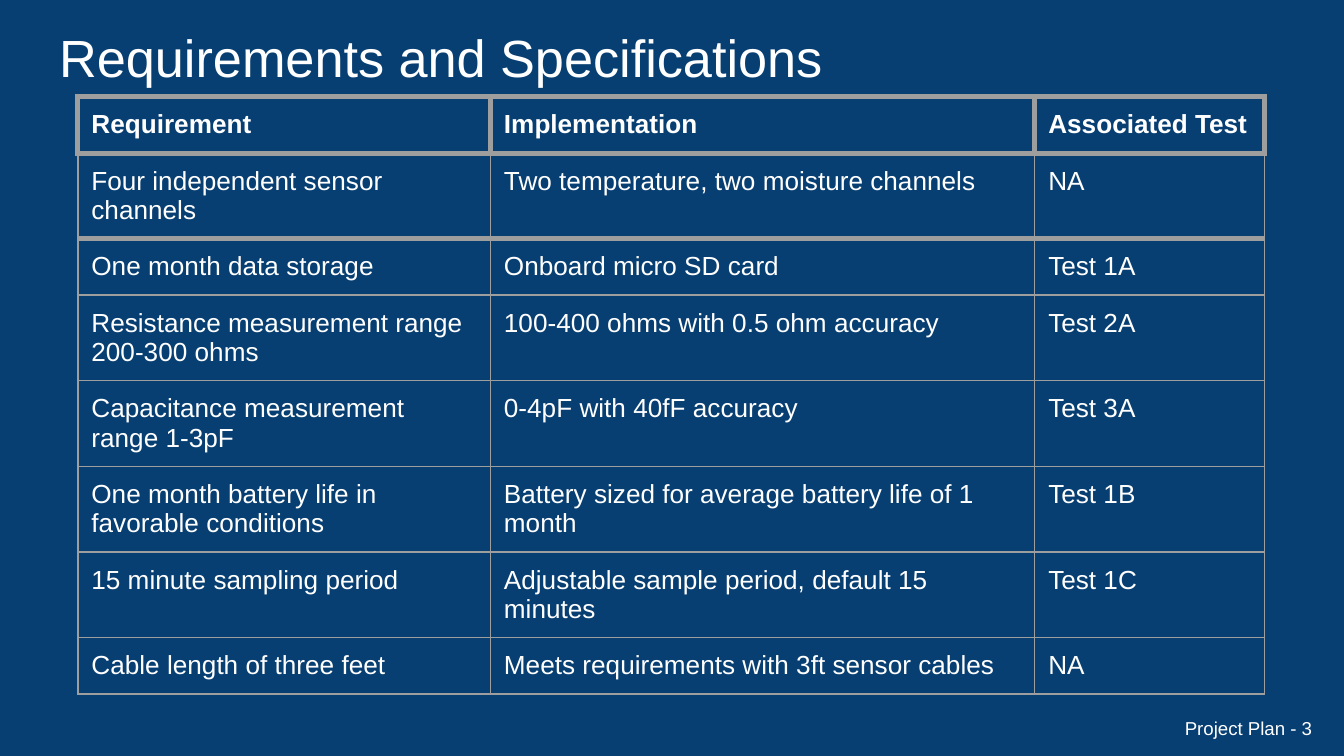
import pptx
import pptx.dml.color
import pptx.enum.text
import pptx.oxml
import pptx.oxml.ns
import pptx.util
from pptx.util import Inches

NAVY = pptx.dml.color.RGBColor(0x08, 0x3F, 0x72)
WHITE = pptx.dml.color.RGBColor(0xFF, 0xFF, 0xFF)
GREY = pptx.dml.color.RGBColor(0x9E, 0x9E, 0x9E)
FONT = "Arial"
THIN, THICK = 0.75, 3

TITLE = "Requirements and Specifications"
FOOTER = "Project Plan - 3"
ROWS = [
    ("Requirement", "Implementation", "Associated Test"),
    ("Four independent sensor channels", "Two temperature, two moisture channels", "NA"),
    ("One month data storage", "Onboard micro SD card", "Test 1A"),
    ("Resistance measurement range 200-300 ohms", "100-400 ohms with 0.5 ohm accuracy", "Test 2A"),
    ("Capacitance measurement range 1-3pF", "0-4pF with 40fF accuracy", "Test 3A"),
    ("One month battery life in favorable conditions",
     "Battery sized for average battery life of 1 month", "Test 1B"),
    ("15 minute sampling period", "Adjustable sample period, default 15 minutes", "Test 1C"),
    ("Cable length of three feet", "Meets requirements with 3ft sensor cables", "NA"),
]
COL_WIDTHS = (3.07, 4.05, 1.71)
ONE_LINE, TWO_LINES = 0.41, 0.63
ROW_HEIGHTS = [ONE_LINE, TWO_LINES, ONE_LINE] + [TWO_LINES] * 4 + [ONE_LINE]


def write(tf, text, size, bold=False, align=pptx.enum.text.PP_ALIGN.LEFT):
    p = tf.paragraphs[0]
    p.alignment = align
    r = p.add_run()
    r.text = text
    r.font.name = FONT
    r.font.size = pptx.util.Pt(size)
    r.font.bold = bold
    r.font.color.rgb = WHITE


def set_margins(box):
    box.margin_left = box.margin_right = Inches(0.1)
    box.margin_top = box.margin_bottom = Inches(0.1)


def set_borders(cell, widths):
    tc_pr = cell._tc.get_or_add_tcPr()
    for i, (side, width) in enumerate(widths.items()):
        tc_pr.insert(i, pptx.oxml.parse_xml(
            f'<a:ln{side} {pptx.oxml.ns.nsdecls("a")} w="{pptx.util.Pt(width)}">'
            f'<a:solidFill><a:srgbClr val="{GREY}"/></a:solidFill></a:ln{side}>'))


def add_text(s, sp, text, box, size, anchor, align):
    sp.left, sp.top, sp.width, sp.height = map(Inches, box)
    tf = sp.text_frame
    tf.word_wrap = True
    tf.auto_size = pptx.enum.text.MSO_AUTO_SIZE.NONE
    tf.vertical_anchor = anchor
    set_margins(tf)
    write(tf, text, size, align=align)


def add_requirements(s):
    frame = s.shapes.add_table(len(ROWS), len(COL_WIDTHS), Inches(0.58), Inches(0.72),
                               Inches(sum(COL_WIDTHS)), Inches(sum(ROW_HEIGHTS)))
    table = frame.table
    table.horz_banding = False
    for col, width in zip(table.columns, COL_WIDTHS):
        col.width = Inches(width)
    for i, (row, height) in enumerate(zip(table.rows, ROW_HEIGHTS)):
        row.height = Inches(height)
        side = THICK if i == 0 else THIN
        top = THICK if i <= 2 else THIN
        bottom = THICK if i <= 1 else THIN
        for cell, text in zip(row.cells, ROWS[i]):
            cell.fill.background()
            set_margins(cell)
            set_borders(cell, {"L": side, "R": side, "T": top, "B": bottom})
            write(cell.text_frame, text, 14, bold=i == 0)


prs = pptx.Presentation()
prs.slide_width = Inches(10)
prs.slide_height = prs.slide_width * 9 // 16
s = prs.slides.add_slide(prs.slide_layouts[5])
s.background.fill.solid()
s.background.fill.fore_color.rgb = NAVY

add_text(s, s.shapes.title, TITLE, (0.34, 0.09, 9.32, 0.63), 28,
         pptx.enum.text.MSO_ANCHOR.TOP, pptx.enum.text.PP_ALIGN.LEFT)
add_requirements(s)
add_text(s, s.shapes.add_textbox(0, 0, 0, 0), FOOTER, (8.55, 5.2, 1.31, 0.43), 10,
         pptx.enum.text.MSO_ANCHOR.MIDDLE, pptx.enum.text.PP_ALIGN.RIGHT)
prs.save("out.pptx")
